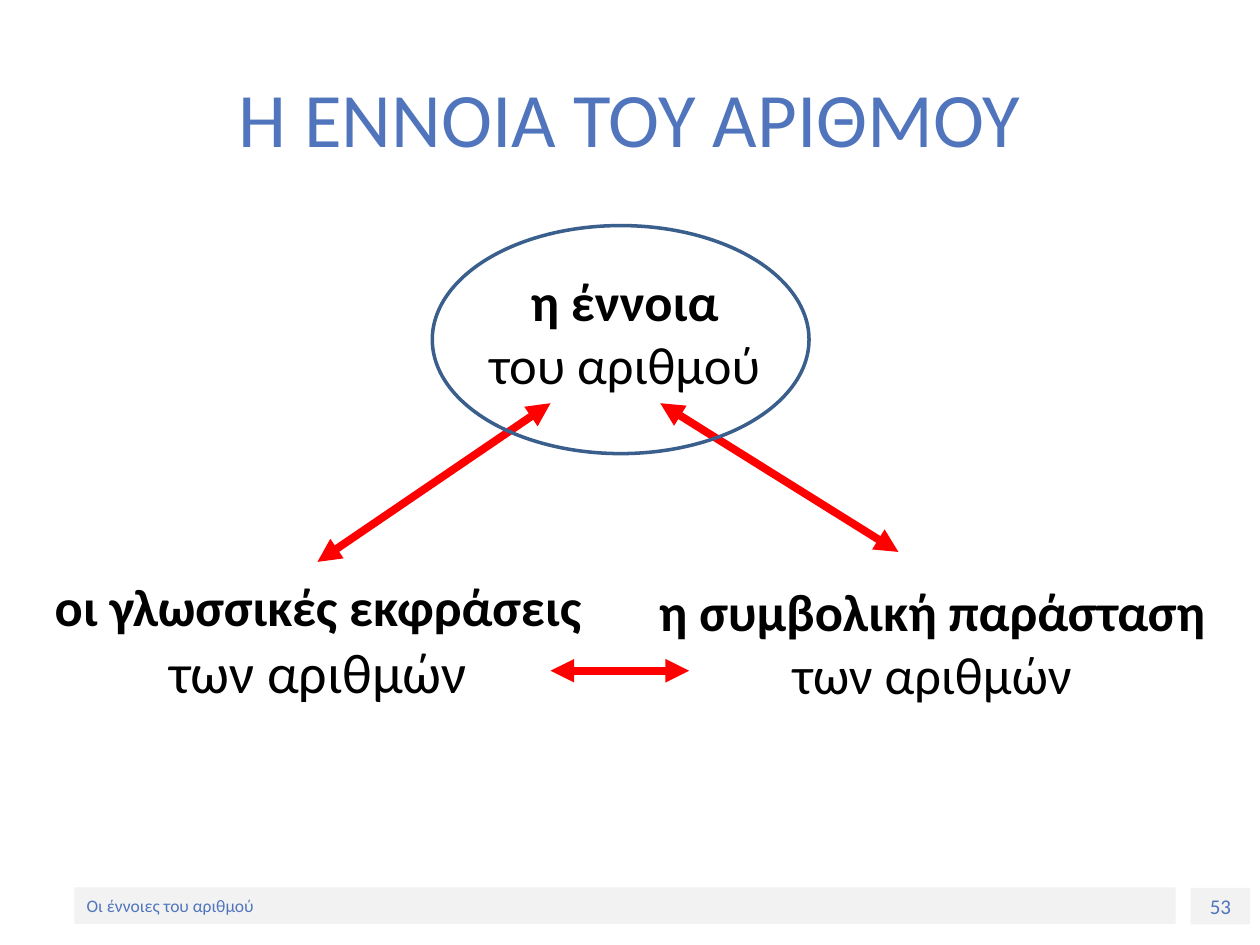
from dataclasses import dataclass

from lxml.etree import SubElement
from pptx import Presentation
from pptx.dml.color import RGBColor
from pptx.enum.shapes import MSO_CONNECTOR, MSO_SHAPE
from pptx.enum.text import MSO_ANCHOR, PP_ALIGN
from pptx.oxml.ns import qn
from pptx.slide import Slide
from pptx.text.text import TextFrame
from pptx.util import Pt


@dataclass(frozen=True)
class Theme:
    font: str = "Calibri"
    accent: RGBColor = RGBColor(0x50, 0x75, 0xBC)
    ink: RGBColor = RGBColor(0, 0, 0)
    bar: RGBColor = RGBColor(0xF2, 0xF2, 0xF2)
    arrow: RGBColor = RGBColor(0xFF, 0, 0)
    outline: RGBColor = RGBColor(0x3A, 0x5F, 0x8C)
    title: float = 44
    concept: float = 30
    large: float = 32
    number: float = 12
    footer: float = 10


@dataclass(frozen=True)
class Box:
    left: float
    top: float
    width: float
    height: float

    def lengths(self) -> tuple:
        return Pt(self.left), Pt(self.top), Pt(self.width), Pt(self.height)


@dataclass(frozen=True)
class Line:
    text: str
    size: float
    color: RGBColor
    bold: bool = False


@dataclass(frozen=True)
class Concept:
    box: Box
    name: str
    subject: str
    subject_size: float


@dataclass(frozen=True)
class Arrow:
    x1: float
    y1: float
    x2: float
    y2: float


THEME = Theme()

CONCEPTS = [
    Concept(Box(247, 149, 220, 81), "η έννοια", "του αριθμού", THEME.concept),
    Concept(Box(14.4, 324, 334.8, 82.8), "οι γλωσσικές εκφράσεις",
            "των αριθμών", THEME.large),
    Concept(Box(354.2, 326.5, 357.1, 81), "η συμβολική παράσταση",
            "των αριθμών", THEME.concept),
]

ARROWS = [
    Arrow(314.6, 230.4, 181.4, 321.1),
    Arrow(377.3, 230.4, 513.4, 315.4),
    Arrow(314.6, 383.3, 393.8, 383.3),
]


def write(tf: TextFrame, lines: list[Line], align: PP_ALIGN) -> None:
    tf.word_wrap = True
    tf.vertical_anchor = MSO_ANCHOR.MIDDLE
    p = tf.paragraphs[0]
    p.text = "\v".join(line.text for line in lines)
    p.alignment = align
    for r, line in zip(p.runs, lines):
        r.font.name = THEME.font
        r.font.size = Pt(line.size)
        r.font.bold = line.bold
        r.font.color.rgb = line.color


def add_text(s: Slide, box: Box, lines: list[Line]) -> None:
    write(s.shapes.add_textbox(*box.lengths()).text_frame, lines, PP_ALIGN.CENTER)


def add_concept(s: Slide, concept: Concept) -> None:
    add_text(s, concept.box, [
        Line(concept.name, THEME.concept, THEME.ink, bold=True),
        Line(concept.subject, concept.subject_size, THEME.ink),
    ])


def add_bar(s: Slide, box: Box, line: Line, align: PP_ALIGN) -> None:
    sp = s.shapes.add_shape(MSO_SHAPE.RECTANGLE, *box.lengths())
    sp.shadow.inherit = False
    sp.fill.solid()
    sp.fill.fore_color.rgb = THEME.bar
    sp.line.fill.background()
    write(sp.text_frame, [line], align)


def add_arrow(s: Slide, arrow: Arrow) -> None:
    cx = s.shapes.add_connector(MSO_CONNECTOR.STRAIGHT, Pt(arrow.x1), Pt(arrow.y1),
                                Pt(arrow.x2), Pt(arrow.y2))
    cx.line.color.rgb = THEME.arrow
    cx.line.width = Pt(4.5)
    ln = cx.line._get_or_add_ln()
    for end in ("a:headEnd", "a:tailEnd"):
        SubElement(ln, qn(end), type="triangle")
    SubElement(cx._element.spPr, qn("a:effectLst"))


def add_ellipse(s: Slide, box: Box) -> None:
    sp = s.shapes.add_shape(MSO_SHAPE.OVAL, *box.lengths())
    sp.shadow.inherit = False
    sp.fill.background()
    sp.line.color.rgb = THEME.outline
    sp.line.width = Pt(2)


def main() -> None:
    prs = Presentation()
    prs.slide_width, prs.slide_height = Pt(720), Pt(540)
    s = prs.slides.add_slide(prs.slide_layouts[6])

    add_bar(s, Box(680.4, 507.3, 34, 21),
            Line("53", THEME.number, THEME.accent), PP_ALIGN.CENTER)
    add_bar(s, Box(42.5, 507, 629.3, 21),
            Line("Οι έννοιες του αριθμού", THEME.footer, THEME.accent), PP_ALIGN.LEFT)
    add_text(s, Box(36, 21.6, 648, 90),
             [Line("Η ΕΝΝΟΙΑ ΤΟΥ ΑΡΙΘΜΟΥ", THEME.title, THEME.accent)])
    for concept in CONCEPTS:
        add_concept(s, concept)
    for arrow in ARROWS:
        add_arrow(s, arrow)
    add_ellipse(s, Box(247, 128.9, 215.3, 130.3))

    prs.save("out.pptx")


if __name__ == "__main__":
    main()
